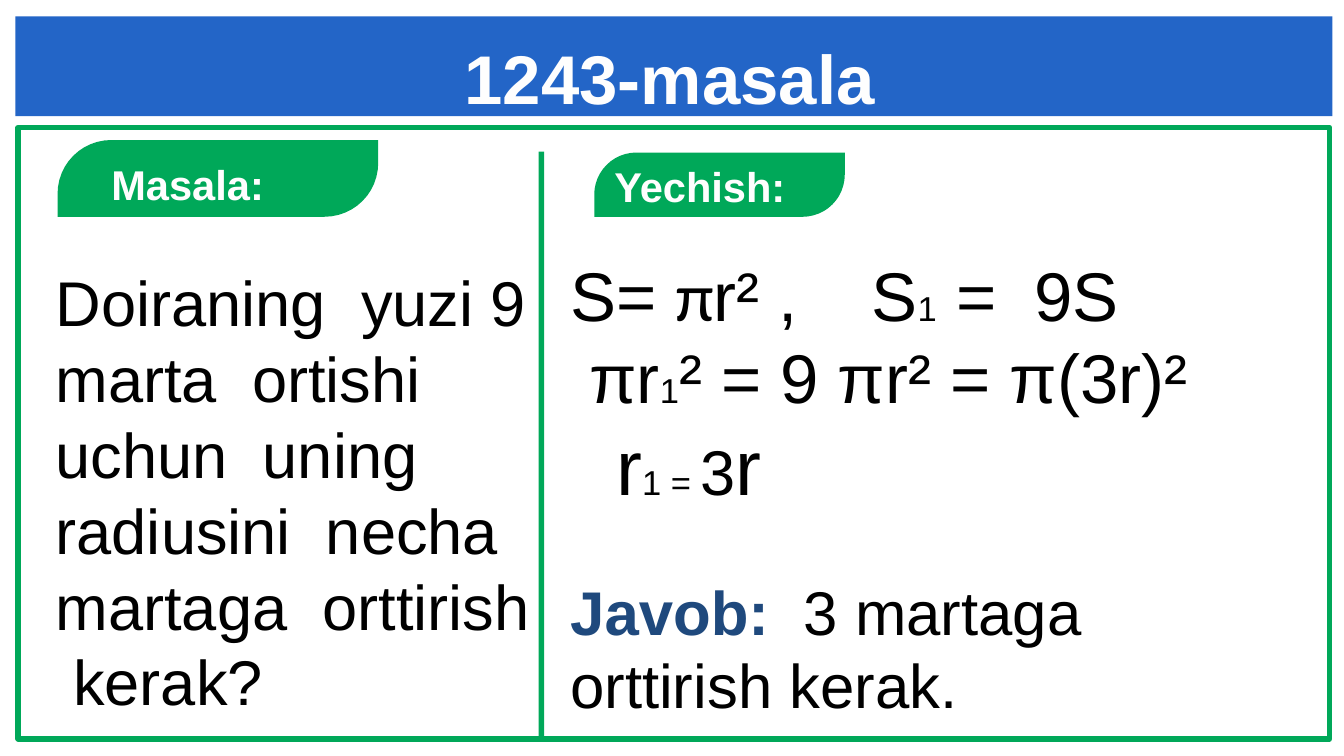
"""Build a maths problem slide with its solution."""
from dataclasses import dataclass
from math import cos, pi, sin

from lxml.etree import SubElement
from pptx import Presentation
from pptx.dml.color import RGBColor
from pptx.enum.shapes import MSO_SHAPE
from pptx.enum.text import MSO_ANCHOR, MSO_AUTO_SIZE, PP_ALIGN
from pptx.oxml.ns import qn
from pptx.util import Inches, Pt

HUES = {"blue": "2365C7", "green": "00A859", "white": "FEFEFE",
        "black": "000000", "navy": "1F497D"}


@dataclass
class Box:
    left: float
    top: float
    width: float
    height: float


@dataclass
class Piece:
    text: str
    size: float
    hue: str = "black"
    bold: bool = False
    font: str = "Arial"


@dataclass
class Line:
    pieces: list[Piece]
    pitch: float = 0
    before: float = 0
    indent: float = 0
    tab: float = 0


@dataclass
class Leaf:
    box: Box
    curve: float


@dataclass
class Block:
    box: Box
    inset: tuple[float, float, float]
    lines: list[Line]


def tint(name: str) -> RGBColor:
    """Look up a colour by name."""
    return RGBColor.from_string(HUES[name])


def place(shape, box: Box) -> None:
    """Move and size a shape."""
    shape.left, shape.top = Inches(box.left), Inches(box.top)
    shape.width, shape.height = Inches(box.width), Inches(box.height)


def paint(shape, hue: str) -> None:
    """Give a shape a plain fill."""
    shape.shadow.inherit = False
    shape.fill.solid()
    shape.fill.fore_color.rgb = tint(hue)
    shape.line.fill.background()


def add_bar(slide, box: Box, hue: str):
    """Draw a plain rectangle."""
    bar = slide.shapes.add_shape(MSO_SHAPE.RECTANGLE, 0, 0, 0, 0)
    place(bar, box)
    paint(bar, hue)
    return bar


def add_leaf(slide, leaf: Leaf) -> None:
    """Draw a tag with two opposite corners rounded."""
    box, curve = leaf.box, leaf.curve
    right, base = box.left + box.width, box.top + box.height
    turns = [pi / 2 * step / 12 for step in range(13)]
    spots = [(box.left + curve * (1 - sin(a)), box.top + curve * (1 - cos(a))) for a in turns]
    spots.append((box.left, base))
    spots += [(right - curve * (1 - sin(a)), base - curve * (1 - cos(a))) for a in turns]
    pen = slide.shapes.build_freeform(Inches(right), Inches(box.top))
    pen.add_line_segments([(Inches(x), Inches(y)) for x, y in spots])
    paint(pen.convert_to_shape(), "green")


def write(shape, block: Block) -> None:
    """Place a text shape and fill in its lines."""
    place(shape, block.box)
    frame = shape.text_frame
    frame.word_wrap, frame.auto_size = True, MSO_AUTO_SIZE.NONE
    frame.vertical_anchor = MSO_ANCHOR.TOP
    frame.margin_left, frame.margin_top, frame.margin_right = map(Inches, block.inset)
    frame.margin_bottom = 0
    for spot, line in enumerate(block.lines):
        para = frame.add_paragraph() if spot else frame.paragraphs[0]
        para.alignment = PP_ALIGN.LEFT
        para.space_before = Pt(line.before)
        if line.pitch:
            para.line_spacing = Pt(line.pitch)
        props = para._p.get_or_add_pPr()
        if line.indent:
            props.set("marL", str(Inches(line.indent)))
        if line.tab:
            stops = SubElement(props, qn("a:tabLst"))
            SubElement(stops, qn("a:tab"), pos=str(Inches(line.tab)), algn="l")
        for piece in line.pieces:
            run = para.add_run()
            run.text = piece.text
            run.font.name, run.font.size = piece.font, Pt(piece.size)
            run.font.bold, run.font.color.rgb = piece.bold, tint(piece.hue)


def label(text: str, size: float) -> list[Line]:
    """Make one line of bold white text."""
    return [Line([Piece(text, size, "white", True)])]


LEAVES = [Leaf(Box(0.6, 1.46, 3.34, 0.8), 0.56), Leaf(Box(6.19, 1.59, 2.61, 0.67), 0.44)]
HEAD = Block(Box(3.17, 0.26, 6.77, 0.91), (1.67, 0.11, 0), label("1243-masala", 51.7))
BIG, MID, SUB = 51.7, 46.3, 25.9
TASK = "Doiraning  yuzi 9 marta  ortishi  uchun  uning  radiusini  necha  martaga  orttirish  kerak?"
PROOF = [
    Line([Piece("S= ", BIG), Piece("π", BIG, font="Calibri"), Piece("r² ,\tS", BIG),
          Piece("1", SUB), Piece(" =  9S", BIG)], 62, tab=3.14),
    Line([Piece("πr", BIG), Piece("1", SUB), Piece("² = 9 πr² = π(3r)²", BIG)], 62, indent=0.2),
    Line([Piece("r", 58.2), Piece("1 = ", SUB), Piece("3", 47.4), Piece("r", 58.2)], 70, indent=0.48),
    Line([Piece("Javob:  ", MID, "navy", True), Piece("3 martaga", MID)], 55, before=48),
    Line([Piece("orttirish kerak.", MID)], 55),
]
BLOCKS = [
    Block(Box(0.55, 1.58, 3.55, 0.57), (0.61, 0.08, 0), label("Masala:", 31.2)),
    Block(Box(6.12, 1.34, 2.84, 0.83), (0.28, 0.34, 0), label("Yechish:", 31.2)),
    Block(Box(0.44, 2.64, 5.36, 4.93), (0.14, 0.1, 0.14), [Line([Piece(TASK, 47.4)], 57)]),
    Block(Box(5.8, 2.52, 8.2, 5.1), (0.14, 0.11, 0.14), PROOF),
]


def main() -> None:
    """Build and save the slide."""
    deck = Presentation()
    deck.slide_width, deck.slide_height = Inches(14), Inches(7.88)
    slide = deck.slides.add_slide(deck.slide_layouts[5])
    frame = add_bar(slide, Box(0.19, 1.33, 13.66, 6.37), "white")
    frame.fill.background()
    frame.line.color.rgb, frame.line.width = tint("green"), Inches(0.06)
    add_bar(slide, Box(0.16, 0.17, 13.72, 1.04), "blue")
    title = slide.shapes.title
    slide.shapes._spTree.append(title._element)
    write(title, HEAD)
    add_bar(slide, Box(5.61, 1.58, 0.06, 6.12), "green")
    for leaf in LEAVES:
        add_leaf(slide, leaf)
    for block in BLOCKS:
        write(slide.shapes.add_textbox(0, 0, 0, 0), block)
    deck.save("out.pptx")


if __name__ == "__main__":
    main()
